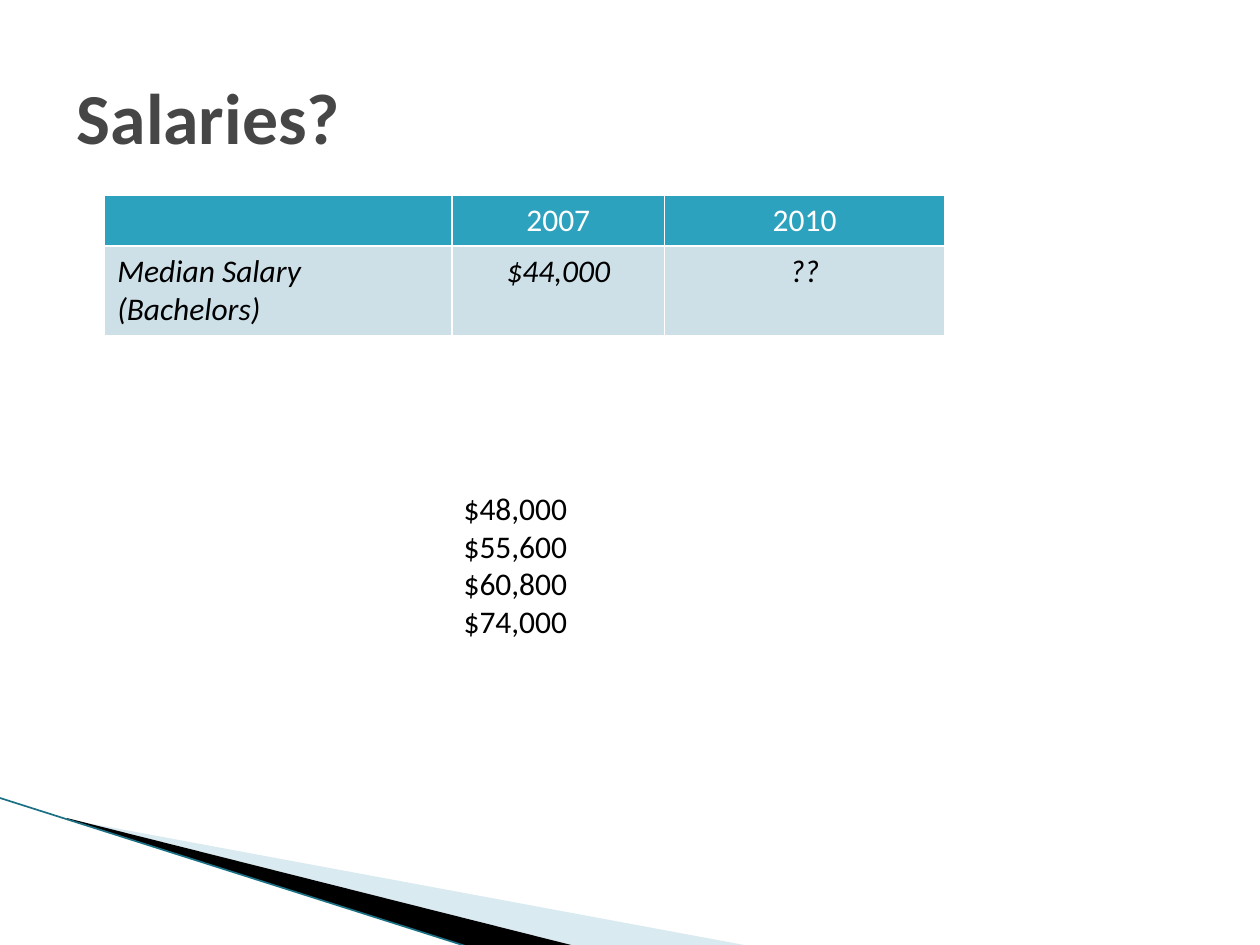
import pptx
import pptx.dml.color
import pptx.enum.text
import pptx.oxml
import pptx.oxml.ns
import pptx.util
from dataclasses import dataclass

Pt = pptx.util.Pt
RGB = pptx.dml.color.RGBColor.from_string
ALIGN = pptx.enum.text.PP_ALIGN
ANCHOR = pptx.enum.text.MSO_ANCHOR
qn = pptx.oxml.ns.qn


@dataclass(frozen=True)
class Theme:
    font: str = "Calibri"
    title_size: float = 41
    body_size: float = 18
    title: str = "464646"
    text: str = "000000"
    white: str = "FFFFFF"
    header: str = "2DA2BF"
    row: str = "CDE0E8"
    pale_wedge: str = "A0CBDC"
    dark_wedge: str = "000000"
    edge: str = "1B7083"


theme = Theme()


def write(frame, text, size=theme.body_size, color=theme.text, bold=False,
          italic=False, align=ALIGN.LEFT):
    """Fill a text frame, one paragraph per line of text."""
    frame.text = text
    for paragraph in frame.paragraphs:
        paragraph.alignment = align
        font = paragraph.font
        font.name, font.size = theme.font, Pt(size)
        font.bold, font.italic = bold, italic
        font.color.rgb = RGB(color)


def add_xml(parent, tag, attributes="", content=""):
    namespace = pptx.oxml.ns.nsdecls("a")
    parent.append(pptx.oxml.parse_xml(
        f"<a:{tag} {namespace} {attributes}>{content}</a:{tag}>"))


deck = pptx.Presentation()
deck.slide_width, deck.slide_height = Pt(720), Pt(540)
slide = deck.slides.add_slide(deck.slide_layouts[5])

# Corner wedges and their edge line
wedges = [
    (theme.pale_wedge, 40, [(39.6, 468.4), (428, 540.5), (328.5, 540.5), (39.6, 468)]),
    (theme.dark_wedge, 100, [(38.2, 467.5), (329, 540.7), (268, 541.2), (38.6, 468)]),
]
for color, opacity, points in wedges:
    corners = [(Pt(x), Pt(y)) for x, y in points]
    outline = slide.shapes.build_freeform(*corners[0], scale=1.0)
    outline.add_line_segments(corners[1:], close=True)
    wedge = outline.convert_to_shape()
    wedge.shadow.inherit = False
    wedge.line.fill.background()
    wedge.fill.solid()
    wedge.fill.fore_color.rgb = RGB(color)
    if opacity < 100:
        fill_color = next(wedge.element.spPr.iter(qn("a:srgbClr")))
        add_xml(fill_color, "alpha", f'val="{opacity * 1000}"')

edge = slide.shapes.add_connector(
    pptx.enum.shapes.MSO_CONNECTOR.STRAIGHT, Pt(-0.7), Pt(455.8), Pt(268), Pt(541.2))
edge.line.color.rgb = RGB(theme.edge)
edge.line.width = Pt(0.95)
add_xml(edge.element.spPr, "effectLst")

# Title
title = slide.shapes.title
title.left, title.top, title.width, title.height = Pt(36.7), Pt(21), Pt(648), Pt(90)
title.text_frame.vertical_anchor = ANCHOR.MIDDLE
write(title.text_frame, "Salaries?", size=theme.title_size, color=theme.title, bold=True)

# Salary table
salaries = [
    ["", "2007", "2010"],
    ["Median Salary (Bachelors)", "$44,000", "??"],
]
column_widths = [198.5, 121.5, 160]
row_heights = [29.2, 51]
table = slide.shapes.add_table(
    len(row_heights), len(column_widths), Pt(59.8), Pt(111.5),
    Pt(sum(column_widths)), Pt(sum(row_heights))).table
for column, width in zip(table.columns, column_widths):
    column.width = Pt(width)
for row, height in zip(table.rows, row_heights):
    row.height = Pt(height)

border = f'<a:solidFill><a:srgbClr val="{theme.white}"/></a:solidFill>'
for r, values in enumerate(salaries):
    is_header = r == 0
    for c, value in enumerate(values):
        cell = table.cell(r, c)
        write(cell.text_frame, value,
              color=theme.white if is_header else theme.text,
              italic=not is_header,
              align=ALIGN.CENTER if c else ALIGN.LEFT)
        properties = cell._tc.get_or_add_tcPr()
        for side in ("lnL", "lnR", "lnT", "lnB"):
            add_xml(properties, side, f'w="{Pt(1)}"', border)
        cell.fill.solid()
        cell.fill.fore_color.rgb = RGB(theme.header if is_header else theme.row)

# Possible answers
choices = slide.shapes.add_textbox(Pt(257.8), Pt(275.8), Pt(74), Pt(116.6)).text_frame
choices.word_wrap = False
choices.auto_size = pptx.enum.text.MSO_AUTO_SIZE.SHAPE_TO_FIT_TEXT
write(choices, "$48,000\n$55,600\n$60,800\n$74,000")

deck.save("out.pptx")
